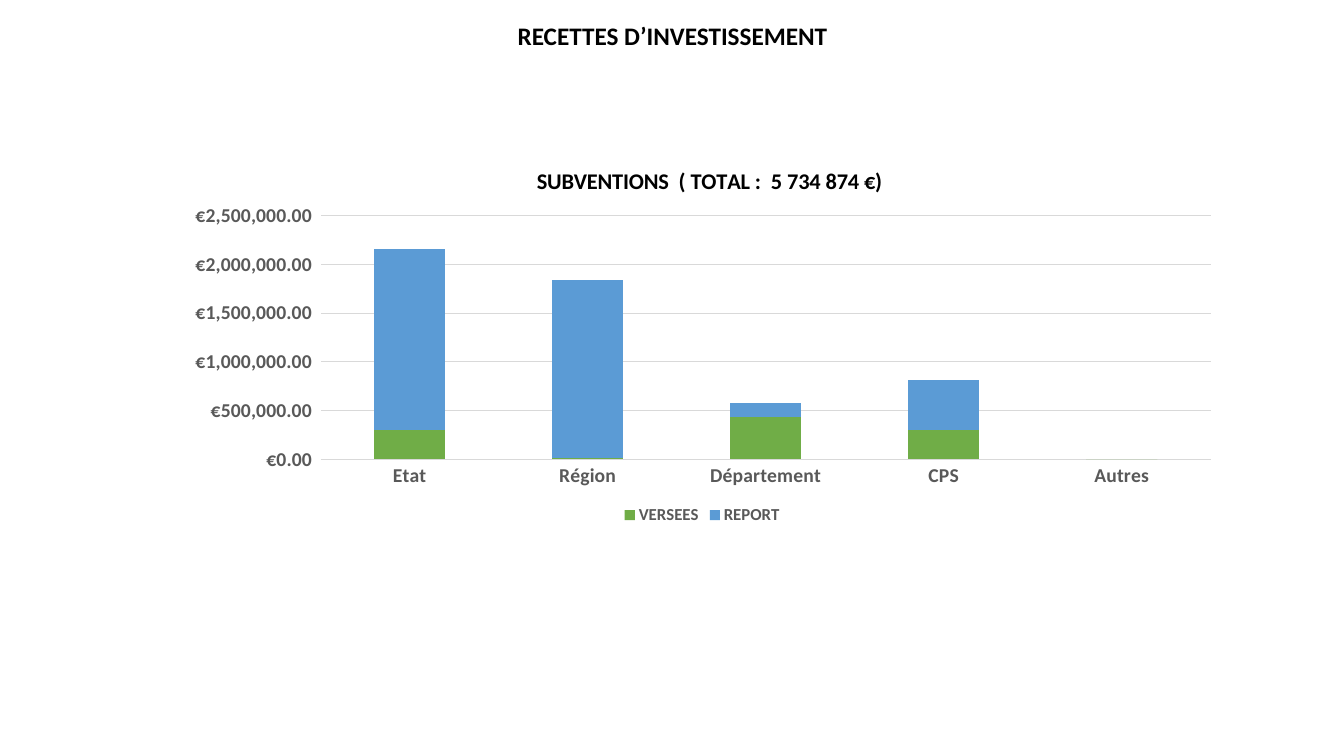
from pptx import Presentation
from pptx.chart.data import CategoryChartData
from pptx.dml.color import RGBColor
from pptx.enum.chart import XL_CHART_TYPE as CT, XL_LEGEND_POSITION as LP, XL_TICK_MARK as TM
from pptx.enum.text import MSO_AUTO_SIZE, PP_ALIGN
from pptx.oxml import parse_xml
from pptx.oxml.ns import nsdecls, qn
from pptx.util import Inches, Pt

COLORS = {"text": "000000", "label": "595959", "grid": "D9D9D9",
          "VERSEES": "70AD47", "REPORT": "5B9BD5"}
EURO = r'"€"#,##0.00_);[Red]\("€"#,##0.00\)'


def set_font(font, size, color):
    for name, value in {"name": "Calibri", "size": Pt(size), "bold": True}.items():
        setattr(font, name, value)
    font.color.rgb = RGBColor.from_string(COLORS[color])


def set_layout(parent, index, **fractions):
    for old in parent.findall(qn("c:layout")):
        parent.remove(old)
    target = '<c:layoutTarget val="inner"/>' if "w" in fractions else ""
    modes = "".join(f'<c:{k}Mode val="edge"/>' for k in "xy")
    sizes = "".join(f'<c:{k} val="{v}"/>' for k, v in fractions.items())
    parent.insert(index, parse_xml(
        f'<c:layout {nsdecls("c")}><c:manualLayout>{target}{modes}{sizes}'
        '</c:manualLayout></c:layout>'))


prs = Presentation()
prs.slide_width, prs.slide_height = Inches(13.33), Inches(7.5)
s = prs.slides.add_slide(prs.slide_layouts[6])

# Heading
tf = s.shapes.add_textbox(Inches(0.68), Inches(0.15), Inches(11.98), Inches(0.4)).text_frame
tf.word_wrap = True
tf.auto_size = MSO_AUTO_SIZE.SHAPE_TO_FIT_TEXT
p = tf.paragraphs[0]
p.alignment = PP_ALIGN.CENTER
r = p.add_run()
r.text = "RECETTES D’INVESTISSEMENT"
set_font(r.font, 18, "text")

# Subsidies chart
data = CategoryChartData(number_format=EURO)
data.categories = ["Etat", "Région", "Département", "CPS", "Autres"]
data.add_series("VERSEES", [300000, 10000, 430000, 300000, 0])
data.add_series("REPORT", [1860000, 1830000, 150000, 510000, None])
chart = s.shapes.add_chart(CT.COLUMN_STACKED, Inches(1.71), Inches(1.41),
                           Inches(10.51), Inches(3.84), data).chart
chart.font.name, chart.font.size = "Calibri", Pt(10)

# Bars
plot = chart.plots[0]
plot.gap_width, plot.overlap, plot.vary_by_categories = 150, 100, False
for series in plot.series:
    series.invert_if_negative = False
    series.format.fill.solid()
    series.format.fill.fore_color.rgb = RGBColor.from_string(COLORS[series.name])

# Chart title
title = chart.chart_title
p = title.text_frame.paragraphs[0]
r = p.add_run()
r.text = "SUBVENTIONS  ( TOTAL :  5 734 874 €)"
set_font(r.font, 16, "text")

# Axes
cat, val = chart.category_axis, chart.value_axis
for axis in (cat, val):
    axis.major_tick_mark = axis.minor_tick_mark = TM.NONE
    set_font(axis.tick_labels.font, 14, "label")
val.minimum_scale, val.maximum_scale, val.major_unit = 0, 2500000, 500000
val.tick_labels.number_format = EURO
val.tick_labels.number_format_is_linked = False
val.format.line.fill.background()
for line in (cat.format.line, val.major_gridlines.format.line):
    line.width = Pt(0.75)
    line.color.rgb = RGBColor.from_string(COLORS["grid"])

# Legend
chart.has_legend = True
chart.legend.position = LP.BOTTOM
chart.legend.include_in_layout = False
set_font(chart.legend.font, 12, "label")

# Placement of title and plot inside the chart
title_xml = title.format.element if hasattr(title.format, "element") else title.element
set_layout(title_xml, 1, x=0.34, y=0.05)
set_layout(chart.element.find(".//" + qn("c:plotArea")), 0, x=0.14, y=0.19, w=0.84, h=0.63)

prs.save("out.pptx")
